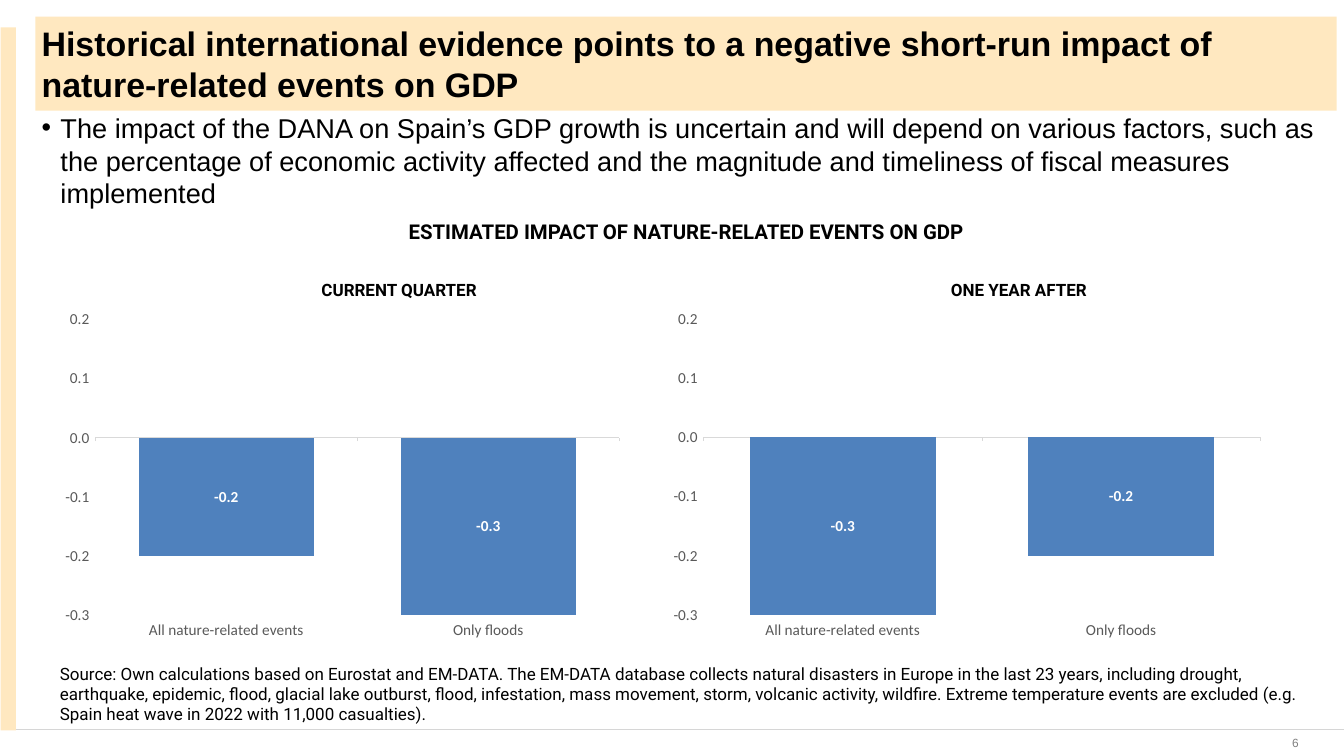
from dataclasses import dataclass

from lxml.etree import SubElement
from pptx import Presentation
from pptx.chart.data import CategoryChartData
from pptx.dml.color import RGBColor
from pptx.enum.chart import XL_CHART_TYPE, XL_LABEL_POSITION, XL_TICK_LABEL_POSITION, XL_TICK_MARK
from pptx.enum.shapes import MSO_CONNECTOR, MSO_SHAPE
from pptx.enum.text import MSO_ANCHOR, MSO_AUTO_SIZE, PP_ALIGN
from pptx.oxml.ns import qn
from pptx.util import Inches, Pt


@dataclass(frozen=True)
class Theme:
    black: str = "000000"
    white: str = "FFFFFF"
    cream: str = "FFE8C0"
    rule: str = "D6D6D6"
    axis_line: str = "D9D9D9"
    axis_text: str = "595959"
    page_number: str = "808080"
    bar: str = "4F81BD"
    main_font: str = "Arial"
    label_font: str = "Roboto"
    chart_font: str = "Calibri"
    title_size: int = 40
    body_size: int = 32
    heading_size: int = 24
    label_size: int = 20
    chart_size: int = 18
    number_size: int = 14


@dataclass(frozen=True)
class Frame:
    left: float
    top: float
    width: float
    height: float

    def lengths(self) -> tuple:
        return Inches(self.left), Inches(self.top), Inches(self.width), Inches(self.height)


@dataclass(frozen=True)
class Label:
    text: str
    frame: Frame
    size: int
    font: str
    color: str
    bold: bool = False
    align: PP_ALIGN = PP_ALIGN.LEFT
    space_after: float = 0


@dataclass(frozen=True)
class ImpactChart:
    frame: Frame
    impacts: tuple


THEME = Theme()
SLIDE_WIDTH, SLIDE_HEIGHT = 21.99, 12.37
STRIP = Frame(0.01, 0.45, 0.25, 11.5)
RULE_TOP = 11.94
EVENTS = ("All nature-related events", "Only floods")

TITLE = Label(
    "Historical international evidence points to a negative short-run impact of "
    "nature-related events on GDP",
    Frame(0.58, 0.27, 21.29, 1.54), THEME.title_size, THEME.main_font, THEME.black, True)
BODY = Label(
    "The impact of the DANA on Spain’s GDP growth is uncertain and will depend on various "
    "factors, such as the percentage of economic activity affected and the magnitude and "
    "timeliness of fiscal measures implemented",
    Frame(0.58, 1.77, 21.23, 1.18), THEME.body_size, THEME.main_font, THEME.black)
LABELS = (
    Label("6", Frame(20.49, 11.98, 0.86, 0.34), THEME.number_size, THEME.main_font,
          THEME.page_number, align=PP_ALIGN.RIGHT),
    Label("Source: Own calculations based on Eurostat and EM-DATA. The EM-DATA database "
          "collects natural disasters in Europe in the last 23 years, including drought, "
          "earthquake, epidemic, flood, glacial lake outburst, flood, infestation, mass "
          "movement, storm, volcanic activity, wildfire. Extreme temperature events are "
          "excluded (e.g. Spain heat wave in 2022 with 11,000 casualties).",
          Frame(0.88, 10.8, 20.92, 1.04), THEME.label_size, THEME.label_font, THEME.black,
          space_after=4.3),
    Label("ESTIMATED IMPACT OF NATURE-RELATED EVENTS ON GDP", Frame(5.27, 3.54, 11.91, 0.5),
          THEME.heading_size, THEME.label_font, THEME.black, True, PP_ALIGN.CENTER),
    Label("CURRENT QUARTER", Frame(1.74, 4.52, 9.58, 0.44),
          THEME.label_size, THEME.label_font, THEME.black, True, PP_ALIGN.CENTER),
    Label("ONE YEAR AFTER", Frame(11.88, 4.52, 9.58, 0.44),
          THEME.label_size, THEME.label_font, THEME.black, True, PP_ALIGN.CENTER),
)
CHARTS = (
    ImpactChart(Frame(0.88, 4.96, 9.44, 5.62), (-0.2, -0.3)),
    ImpactChart(Frame(10.82, 4.95, 10, 5.63), (-0.3, -0.2)),
)


def paint(target, color: str) -> None:
    target.fill.solid()
    target.fill.fore_color.rgb = RGBColor.from_string(color)


def style_font(font, name: str, size: int, color: str, bold: bool = False) -> None:
    font.name = name
    font.size = Pt(size)
    font.bold = bold
    font.color.rgb = RGBColor.from_string(color)


def write(box, label: Label, anchor: MSO_ANCHOR = MSO_ANCHOR.TOP) -> None:
    box.left, box.top, box.width, box.height = label.frame.lengths()
    frame = box.text_frame
    frame.text = label.text
    frame.word_wrap = True
    frame.auto_size = MSO_AUTO_SIZE.NONE
    frame.vertical_anchor = anchor
    para = frame.paragraphs[0]
    para.alignment = label.align
    para.space_before = Pt(0)
    para.space_after = Pt(label.space_after)
    style_font(para.runs[0].font, label.font, label.size, label.color, label.bold)


def add_bullet(para, indent: float) -> None:
    properties = para._p.get_or_add_pPr()
    properties.set("marL", str(Inches(indent)))
    properties.set("indent", str(-Inches(indent)))
    SubElement(properties, qn("a:buFont")).set("typeface", THEME.main_font)
    SubElement(properties, qn("a:buChar")).set("char", "•")


def add_border(page) -> None:
    rule = page.shapes.add_connector(
        MSO_CONNECTOR.STRAIGHT, Inches(STRIP.left + STRIP.width), Inches(RULE_TOP),
        Inches(SLIDE_WIDTH), Inches(RULE_TOP))
    rule.line.color.rgb = RGBColor.from_string(THEME.rule)
    rule.line.width = Pt(0.82)
    SubElement(rule._element.spPr, qn("a:effectLst"))
    strip = page.shapes.add_shape(MSO_SHAPE.RECTANGLE, *STRIP.lengths())
    strip.shadow.inherit = False
    paint(strip, THEME.cream)
    strip.line.fill.background()


def add_impact_chart(page, item: ImpactChart) -> None:
    data = CategoryChartData(number_format="0.0")
    data.categories = EVENTS
    data.add_series("Series 1", item.impacts)
    chart = page.shapes.add_chart(
        XL_CHART_TYPE.COLUMN_CLUSTERED, *item.frame.lengths(), data).chart
    chart.has_title = False
    chart.has_legend = False
    style_font(chart.font, THEME.chart_font, THEME.chart_size, THEME.black)

    events, values = chart.category_axis, chart.value_axis
    for axis in (events, values):
        axis.has_major_gridlines = False
        axis.major_tick_mark = XL_TICK_MARK.OUTSIDE
        axis.minor_tick_mark = XL_TICK_MARK.NONE
        style_font(axis.tick_labels.font, THEME.chart_font, THEME.chart_size, THEME.axis_text)
    events.tick_label_position = XL_TICK_LABEL_POSITION.LOW
    events.format.line.color.rgb = RGBColor.from_string(THEME.axis_line)
    events.format.line.width = Pt(0.75)
    values.format.line.fill.background()
    values.minimum_scale, values.maximum_scale, values.major_unit = -0.3, 0.2, 0.1
    values.tick_labels.number_format = "0.0"
    values.tick_labels.number_format_is_linked = False

    plot = chart.plots[0]
    plot.vary_by_categories = False
    plot.gap_width = 50
    plot.overlap = -27
    series = plot.series[0]
    series.invert_if_negative = False
    paint(series.format, THEME.bar)
    labels = series.data_labels
    labels.show_value = True
    labels.position = XL_LABEL_POSITION.CENTER
    labels.number_format = "0.0"
    labels.number_format_is_linked = False
    style_font(labels.font, THEME.chart_font, THEME.chart_size, THEME.white, True)


def main() -> None:
    deck = Presentation()
    deck.slide_width, deck.slide_height = Inches(SLIDE_WIDTH), Inches(SLIDE_HEIGHT)
    page = deck.slides.add_slide(deck.slide_layouts[1])
    add_border(page)
    title, body = page.shapes.title, page.placeholders[1]
    write(title, TITLE, MSO_ANCHOR.MIDDLE)
    paint(title, THEME.cream)
    write(body, BODY)
    add_bullet(body.text_frame.paragraphs[0], 0.31)
    for label in LABELS:
        write(page.shapes.add_textbox(*label.frame.lengths()), label)
    for item in CHARTS:
        add_impact_chart(page, item)
    deck.save("out.pptx")


if __name__ == "__main__":
    main()
